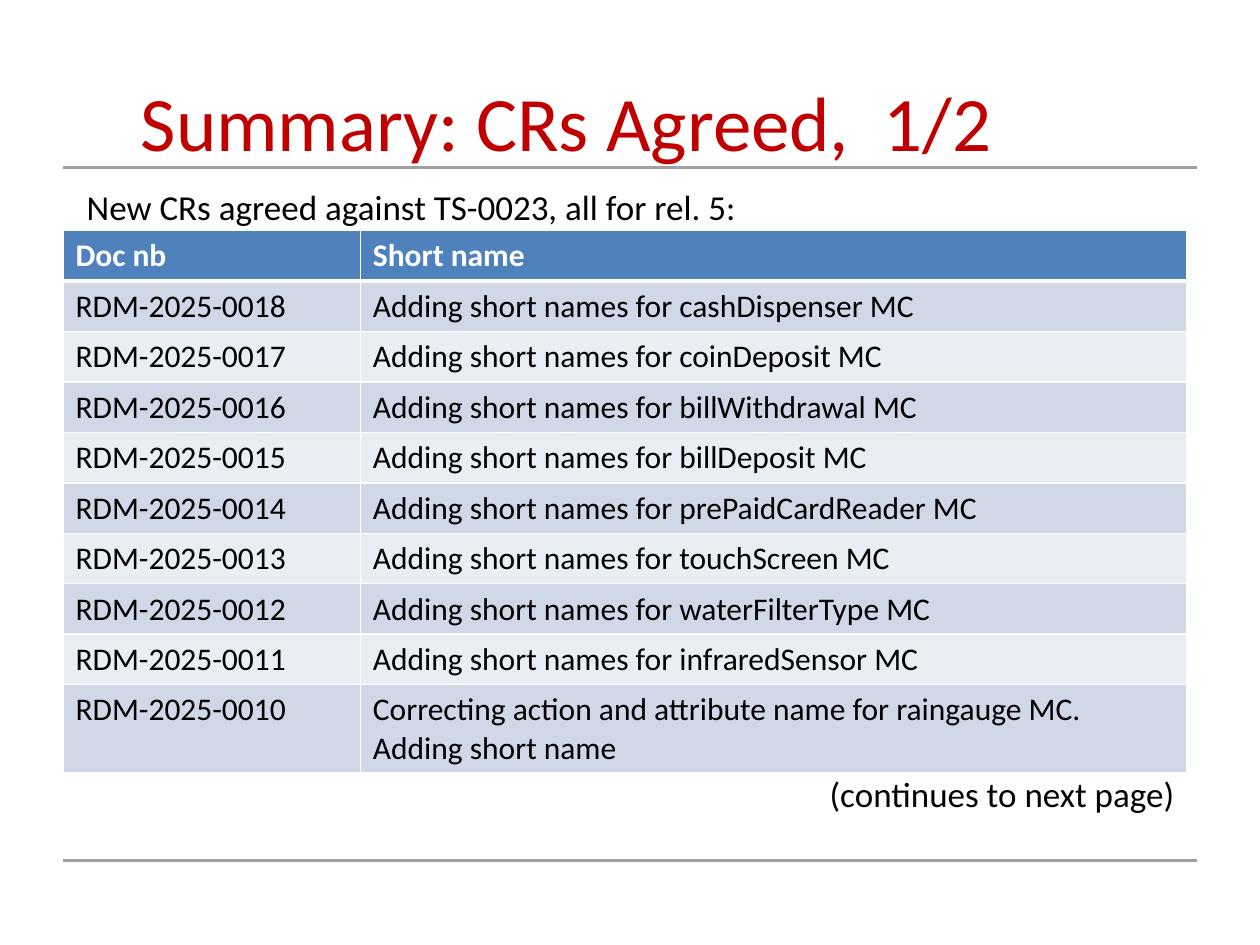
from lxml.etree import SubElement
from pptx import Presentation
from pptx.dml.color import RGBColor
from pptx.enum.shapes import MSO_CONNECTOR as CONN
from pptx.enum.text import MSO_ANCHOR as ANCHOR, PP_ALIGN as ALIGN
from pptx.oxml.ns import qn
from pptx.util import Inches, Pt

# Content
TITLE = "Summary: CRs Agreed,  1/2"
INTRO = "New CRs agreed against TS-0023, all for rel. 5:"
CONTINUED = "(continues to next page)"
HEADER = ("Doc nb", "Short name")
CRS = [
    ("RDM-2025-0018", "Adding short names for cashDispenser MC"),
    ("RDM-2025-0017", "Adding short names for coinDeposit MC"),
    ("RDM-2025-0016", "Adding short names for billWithdrawal MC"),
    ("RDM-2025-0015", "Adding short names for billDeposit MC"),
    ("RDM-2025-0014", "Adding short names for prePaidCardReader MC"),
    ("RDM-2025-0013", "Adding short names for touchScreen MC"),
    ("RDM-2025-0012", "Adding short names for waterFilterType MC"),
    ("RDM-2025-0011", "Adding short names for infraredSensor MC"),
    ("RDM-2025-0010",
     "Correcting action and attribute name for raingauge MC. Adding short name"),
]

# Style
FONT = "Calibri"
RED, BLACK, WHITE, GRAY = "C00000", "000000", "FFFFFF", "A0A0A3"
HEADER_FILL, BANDS = "4F81BD", ("D0D8E8", "E9EDF4")
COL_WIDTHS = (2.36, 6.56)
ROW_HEIGHT = 0.35
RULE_YS = (6.83, 1.33)


def rgb(color):
    return RGBColor.from_string(color)


def set_font(p, size, color, bold=False):
    p.font.name, p.font.size, p.font.bold = FONT, Pt(size), bold
    p.font.color.rgb = rgb(color)


def add_text(s, box, text, size, color, align, inset_top=0.05, indent=0):
    tf = s.shapes.add_textbox(*map(Inches, box)).text_frame
    tf.word_wrap = True
    tf.vertical_anchor = ANCHOR.TOP
    tf.margin_top = Inches(inset_top)
    p = tf.paragraphs[0]
    p.text, p.alignment = text, align
    if indent:
        p._p.get_or_add_pPr().set("marL", str(Inches(indent)))
    set_font(p, size, color)


def add_rule(s, y):
    line = s.shapes.add_connector(
        CONN.STRAIGHT, Inches(0.5), Inches(y), Inches(9.5), Inches(y))
    line.line.color.rgb = rgb(GRAY)
    line.line.width = Pt(1.75)
    SubElement(line._element.spPr, qn("a:effectLst"))


def set_borders(cell, **widths):
    tc_pr = cell._tc.get_or_add_tcPr()
    for side, width in widths.items():
        ln = SubElement(tc_pr, qn(f"a:ln{side}"), w=str(Pt(width)))
        fill = SubElement(ln, qn("a:solidFill"))
        SubElement(fill, qn("a:srgbClr"), val=WHITE)


def add_cr_table(s, left, top):
    rows = [HEADER, *CRS]
    table = s.shapes.add_table(
        len(rows), len(HEADER), Inches(left), Inches(top),
        Inches(sum(COL_WIDTHS)), Inches(ROW_HEIGHT * len(rows))).table
    for col, width in zip(table.columns, COL_WIDTHS):
        col.width = Inches(width)
    for i, row in enumerate(rows):
        header = i == 0
        table.rows[i].height = Inches(ROW_HEIGHT)
        for j, text in enumerate(row):
            cell = table.cell(i, j)
            cell.text = text
            set_font(cell.text_frame.paragraphs[0], 18,
                     WHITE if header else BLACK, header)
            # Borders come before the fill in the cell properties
            set_borders(cell, L=1, R=1, T=3 if i == 1 else 1, B=3 if header else 1)
            cell.fill.solid()
            cell.fill.fore_color.rgb = rgb(HEADER_FILL if header else BANDS[(i - 1) % 2])


def main():
    prs = Presentation()
    prs.slide_width, prs.slide_height = Inches(10), Inches(7.5)
    s = prs.slides.add_slide(prs.slide_layouts[6])

    # Rules above and below the content
    for y in RULE_YS:
        add_rule(s, y)

    # Title, introduction, table and closing remark
    add_text(s, (0, 0.5, 9, 1.25), TITLE, 44, RED, ALIGN.CENTER, inset_top=0.09)
    add_text(s, (0.5, 1.42, 8.5, 0.5), INTRO, 20, BLACK, ALIGN.LEFT, indent=0.09)
    add_cr_table(s, 0.5, 1.83)
    add_text(s, (0.75, 6.08, 8.67, 0.5), CONTINUED, 20, BLACK, ALIGN.RIGHT, indent=0.09)

    prs.save("out.pptx")


if __name__ == "__main__":
    main()
